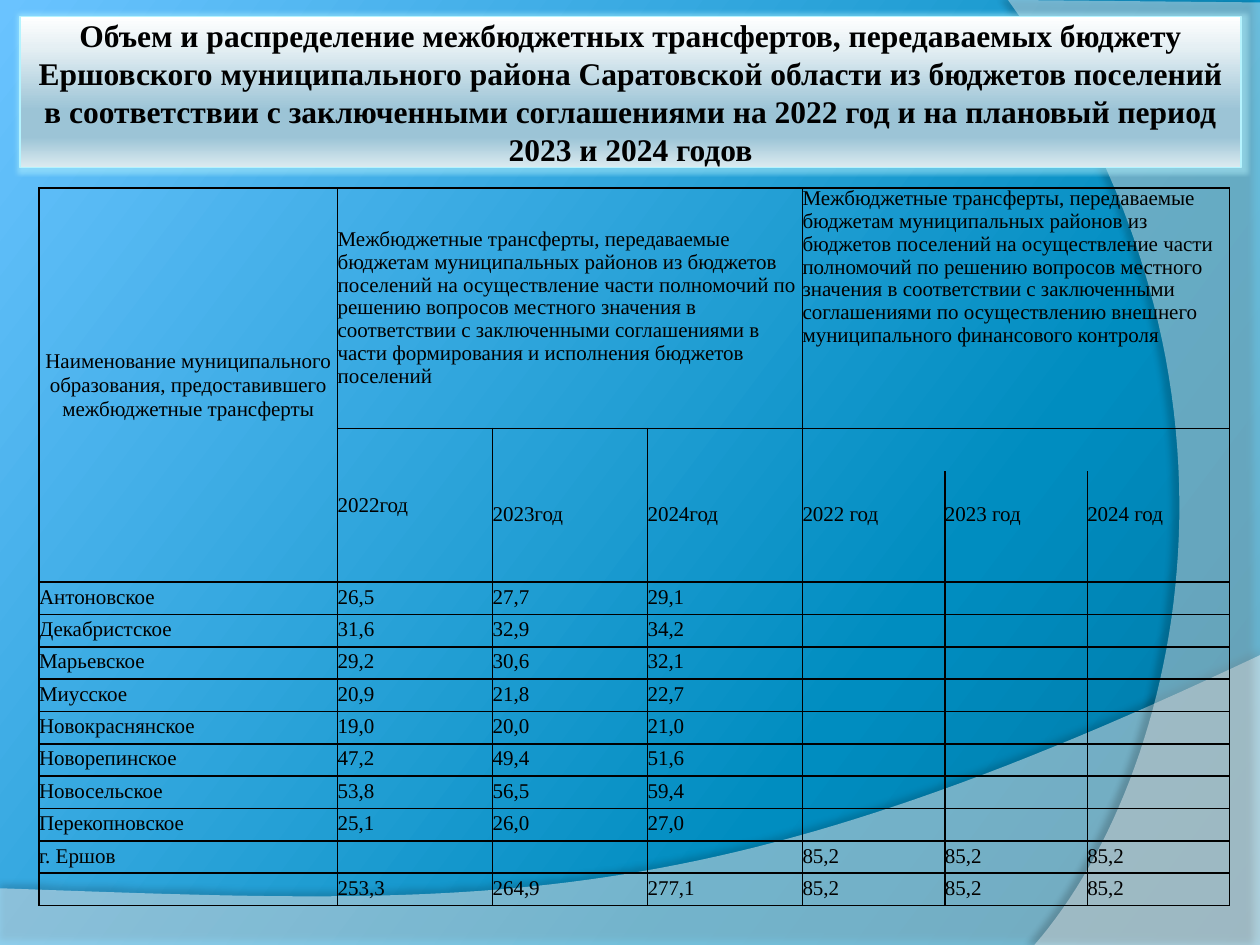
from dataclasses import dataclass

from lxml.etree import SubElement
from pptx import Presentation
from pptx.dml.color import RGBColor
from pptx.enum.text import MSO_ANCHOR as Anchor, MSO_AUTO_SIZE as AutoSize, PP_ALIGN as Align
from pptx.oxml import parse_xml
from pptx.oxml.ns import qn
from pptx.util import Emu, Inches, Pt

FONT = "Times New Roman"
BLACK, WHITE, CYAN = "000000", "FFFFFF", "B4F3FE"
NAMESPACE = 'xmlns:a="http://schemas.openxmlformats.org/drawingml/2006/main"'
WIDTH, HEIGHT = 10, 7.5

TITLE = ("Объем и распределение межбюджетных трансфертов, передаваемых бюджету Ершовского "
         "муниципального района Саратовской области из бюджетов поселений в соответствии с "
         "заключенными соглашениями на 2022 год и на плановый период 2023 и 2024 годов")
TRANSFERS = ("Межбюджетные трансферты, передаваемые бюджетам муниципальных районов из бюджетов "
             "поселений на осуществление части полномочий по решению вопросов местного значения "
             "в соответствии с заключенными соглашениями ")

TABLE_LEFT, TABLE_TOP, TABLE_HEIGHT = 0.31, 1.49, 5.7
COLUMNS = [2.37] + [1.23] * 3 + [1.13] * 3
HEADER_ROWS = [1.91, 0.34, 0.88]
SETTLEMENTS = [
    ("Антоновское", "26,5", "27,7", "29,1"),
    ("Декабристское", "31,6", "32,9", "34,2"),
    ("Марьевское", "29,2", "30,6", "32,1"),
    ("Миусское", "20,9", "21,8", "22,7"),
    ("Новокраснянское", "19,0", "20,0", "21,0"),
    ("Новорепинское", "47,2", "49,4", "51,6"),
    ("Новосельское", "53,8", "56,5", "59,4"),
    ("Перекопновское", "25,1", "26,0", "27,0"),
    ("г. Ершов", "", "", "", "85,2", "85,2", "85,2"),
    ("", "253,3", "264,9", "277,1", "85,2", "85,2", "85,2"),
]
ROW_HEIGHT = (TABLE_HEIGHT - sum(HEADER_ROWS)) / len(SETTLEMENTS)


@dataclass
class Header:
    row: int
    column: int
    text: str
    rows: int = 1
    columns: int = 1
    anchor: Anchor = Anchor.MIDDLE
    align: Align = Align.LEFT
    spacing: object = Pt(13)
    top: float = 0


@dataclass
class Wave:
    curve: list
    corners: list
    opacity: int
    shadow_opacity: int
    shadow_distance: float
    shadow_angle: int


HEADERS = [
    Header(0, 0, "Наименование муниципального образования, предоставившего межбюджетные трансферты",
           rows=3, align=Align.CENTER, spacing=Pt(13.7)),
    Header(0, 1, TRANSFERS + "в части формирования и исполнения бюджетов поселений", columns=3),
    Header(0, 4, TRANSFERS + "по осуществлению внешнего муниципального финансового контроля",
           columns=3, anchor=Anchor.TOP),
    Header(1, 1, "2022год", rows=2),
    Header(1, 4, "", columns=3),
] + [
    Header(2, column, text, anchor=Anchor.TOP, spacing=1.15, top=0.22)
    for column, text in enumerate(["2023год", "2024год", "2022 год", "2023 год", "2024 год"], 2)
]

WAVES = [
    Wave([(10, 5.2), (5.59, 7.29), (3.91, 7.19), (0, 7.05)], [(0, 7.5), (10, 7.5)], 45, 35, 3.5, 270),
    Wave([(8.21, 7.5), (9.35, 6.19), (10.18, 3), (8, 0)], [(10, 0.02), (10, 7.5)], 40, 45, 4, 180),
]


def color(value: str) -> RGBColor:
    return RGBColor.from_string(value)


def gradient(stops: list, angle: int):
    marks = "".join(f'<a:gs pos="{share * 1000}"><a:srgbClr val="{value}"/></a:gs>'
                    for share, value in stops)
    return parse_xml(f'<a:gradFill {NAMESPACE} rotWithShape="1"><a:gsLst>{marks}</a:gsLst>'
                     f'<a:lin ang="{angle * 60000}" scaled="0"/></a:gradFill>')


def replace_gradient(fill, parent, stops: list, angle: int) -> None:
    fill.gradient()
    parent.replace(parent.find(qn("a:gradFill")), gradient(stops, angle))


def effects(body: str):
    return parse_xml(f"<a:effectLst {NAMESPACE}>{body}</a:effectLst>")


def bezier(points: list, steps: int = 60) -> list:
    """Points along a cubic curve, in EMU."""
    def value(t, axis):
        a, b, c, d = (point[axis] for point in points)
        return (1 - t)**3 * a + 3 * (1 - t)**2 * t * b + 3 * (1 - t) * t**2 * c + t**3 * d
    return [tuple(Inches(value(i / steps, axis)) for axis in (0, 1)) for i in range(steps + 1)]


def draw_wave(slide, wave: Wave, depth: int) -> None:
    outline = bezier(wave.curve) + [(Inches(x), Inches(y)) for x, y in wave.corners]
    builder = slide.shapes.build_freeform(*outline[0])
    builder.add_line_segments(outline[1:], close=True)
    shape = builder.convert_to_shape()
    shape.line.fill.background()
    shape.fill.solid()
    shape.fill.fore_color.rgb = color(WHITE)
    properties = shape.element.spPr
    SubElement(properties.find(".//" + qn("a:srgbClr")), qn("a:alpha"), val=str(wave.opacity * 1000))
    properties.append(effects(
        f'<a:outerShdw blurRad="{Pt(4)}" dist="{Pt(wave.shadow_distance)}" '
        f'dir="{wave.shadow_angle * 60000}" rotWithShape="0"><a:srgbClr val="{BLACK}">'
        f'<a:alpha val="{wave.shadow_opacity * 1000}"/></a:srgbClr></a:outerShdw>'))
    slide.shapes.element.insert(2 + depth, shape.element)


def style_paragraph(paragraph, size: float, align: Align, bold: bool = False) -> None:
    paragraph.alignment = align
    paragraph.font.name, paragraph.font.size, paragraph.font.bold = FONT, Pt(size), bold
    paragraph.font.color.rgb = color(BLACK)


def draw_title(slide) -> None:
    title = slide.shapes.title
    title.left, title.top, title.width, title.height = map(Inches, (0.16, 0.13, 9.69, 1.2))
    frame = title.text_frame
    frame.text = TITLE
    frame.word_wrap, frame.auto_size, frame.vertical_anchor = True, AutoSize.NONE, Anchor.MIDDLE
    frame.margin_left = frame.margin_right = frame.margin_top = frame.margin_bottom = Inches(0.05)
    style_paragraph(frame.paragraphs[0], 18, Align.CENTER, bold=True)
    frame.paragraphs[0].line_spacing = 1.0
    frame.paragraphs[0].space_before = Pt(0)
    properties = title.element.spPr
    replace_gradient(title.fill, properties,
                     [(0, WHITE), (20, "E6F0F4"), (62, "9CC4D6"), (80, "9CC4D6"), (100, "DCEBF0")], 90)
    title.line.color.rgb, title.line.width = color(CYAN), Pt(0.75)
    properties.append(effects(f'<a:glow rad="{Pt(5)}"><a:srgbClr val="{CYAN}">'
                              '<a:alpha val="50000"/></a:srgbClr></a:glow>'))


def set_borders(cell, open_sides: str) -> None:
    properties = cell._tc.get_or_add_tcPr()
    for side in "LRTB":
        line = SubElement(properties, qn(f"a:ln{side}"), w=str(Pt(1)))
        if side in open_sides:
            SubElement(line, qn("a:noFill"))
        else:
            SubElement(SubElement(line, qn("a:solidFill")), qn("a:srgbClr"), val=BLACK)


def write_cell(cell, text: str, spacing=1.15, align: Align = Align.LEFT,
               anchor: Anchor = Anchor.TOP, top: float = 0) -> None:
    cell.margin_left = cell.margin_right = cell.margin_bottom = 0
    cell.margin_top, cell.vertical_anchor = Inches(top), anchor
    cell.text = text
    paragraph = cell.text_frame.paragraphs[0]
    style_paragraph(paragraph, 12, align)
    paragraph.line_spacing = spacing
    if not text:
        SubElement(paragraph._p, qn("a:endParaRPr"), sz="1200")


def draw_table(slide) -> None:
    heights = HEADER_ROWS + [ROW_HEIGHT] * len(SETTLEMENTS)
    table = slide.shapes.add_table(len(heights), len(COLUMNS), Inches(TABLE_LEFT), Inches(TABLE_TOP),
                                   Inches(sum(COLUMNS)), Inches(TABLE_HEIGHT)).table
    table.first_row = table.horz_banding = False
    for column, width in zip(table.columns, COLUMNS):
        column.width = Inches(width)
    for row, height in zip(table.rows, heights):
        row.height = Inches(height)
    for r in range(len(heights)):
        for c in range(len(COLUMNS)):
            cell = table.cell(r, c)
            set_borders(cell, {1: "B", 2: "T"}.get(r, "") if c > 1 else "")
            cell.fill.background()
            values = SETTLEMENTS[r - len(HEADER_ROWS)] if r >= len(HEADER_ROWS) else ()
            if r >= len(HEADER_ROWS) or (r, c) in ((1, 2), (1, 3)):
                write_cell(cell, values[c] if c < len(values) else "")
    for header in HEADERS:
        cell = table.cell(header.row, header.column)
        if header.rows * header.columns > 1:
            cell.merge(table.cell(header.row + header.rows - 1, header.column + header.columns - 1))
        write_cell(cell, header.text, header.spacing, header.align, header.anchor, header.top)


def main() -> None:
    presentation = Presentation()
    presentation.slide_width, presentation.slide_height = Inches(WIDTH), Inches(HEIGHT)
    slide = presentation.slides.add_slide(presentation.slide_layouts[5])
    fill = slide.background.fill
    replace_gradient(fill, slide.element.cSld.bg.bgPr,
                     [(0, "0076A1"), (30, "008DC0"), (100, "6AC3FF")], 217)
    for depth, wave in enumerate(WAVES):
        draw_wave(slide, wave, depth)
    draw_title(slide)
    draw_table(slide)
    presentation.save("out.pptx")


if __name__ == "__main__":
    main()
